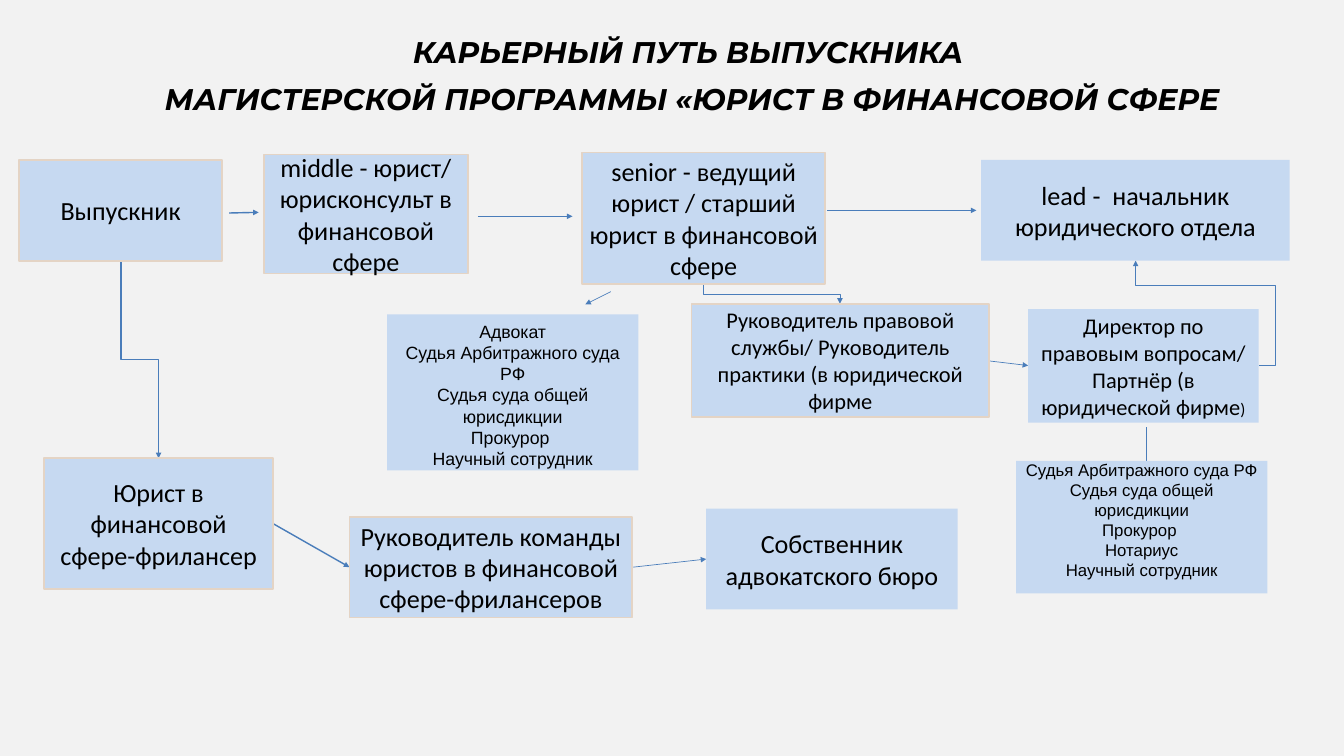
from lxml.etree import SubElement
from pptx import Presentation
from pptx.dml.color import RGBColor
from pptx.enum.shapes import MSO_CONNECTOR, MSO_SHAPE
from pptx.enum.text import MSO_ANCHOR, PP_ALIGN
from pptx.oxml.ns import qn
from pptx.util import Pt

PX = 9144
SLIDE = (2000, 1125)
INK, PAPER, BLUE, BEIGE, ARROW = "000000", "F2F2F2", "C6D9F1", "E4D4C5", "4A7DBA"

TITLE = ["КАРЬЕРНЫЙ ПУТЬ ВЫПУСКНИКА ", "МАГИСТЕРСКОЙ ПРОГРАММЫ «ЮРИСТ В ФИНАНСОВОЙ СФЕРЕ"]
TITLE_PLACE = (102, 32, 1857, 143)

# place, font size, outlined, text
ROLES = [
    ((28, 238, 303, 150), 28, True, "Выпускник"),
    ((66, 682, 340, 194), 28, True, "Юрист в финансовой сфере-фрилансер"),
    ((393, 230, 303, 177), 28, True, "middle - юрист/ юрисконсульт в финансовой сфере"),
    ((866, 227, 362, 195), 28, True, "senior - ведущий юрист / старший юрист в финансовой сфере"),
    ((520, 769, 421, 150), 28, True, "Руководитель команды юристов в финансовой сфере-фрилансеров"),
    ((1029, 452, 443, 168), 24, True, "Руководитель правовой службы/ Руководитель практики (в юридической фирме"),
    ((1530, 460, 343, 169), 24, False, "Директор по правовым вопросам/ Партнёр (в юридической фирме"),
    ((1460, 238, 459, 150), 28, False, "lead -  начальник юридического отдела"),
    ((1051, 757, 374, 150), 28, False, "Собственник адвокатского бюро"),
]
CLOSING_BRACKET = {"Директор по правовым вопросам/ Партнёр (в юридической фирме": (")", 18)}

COURT = ["Судья Арбитражного суда РФ", "Судья суда общей юрисдикции", "Прокурор "]
ALTERNATIVES = [
    ((1512, 686, 374, 197), 18, (5, 27), COURT + ["Нотариус", "Научный сотрудник"]),
    ((576, 468, 374, 232), 19, (12, 5), ["Адвокат"] + COURT + ["Научный сотрудник"]),
]

STRAIGHT_STEPS = [
    ((341, 317), (385, 316), 1.5),
    ((711, 322), (852, 322), 1.5),
    ((406, 779), (520, 844), 1.5),
    ((1231, 313), (1453, 313), 0.75),
    ((1471, 537), (1530, 544), 0.75),
    ((942, 844), (1051, 832), 0.75),
    ((1706, 636), (1706, 731), 0.75),
    ((909, 434), (871, 453), 0.75),
]
DOWNWARD_STEPS = [((180, 388), (236, 682), 1.5), ((1047, 423), (1250, 452), 0.75)]
RETURN_STEP = ((1873, 544), (1690, 388), 0.75)
RETURN_BENDS = {"adj1": -13600, "adj2": 76900}


def px(*lengths):
    """Turn px into EMU."""
    return [round(length * PX) for length in lengths]


def color(value):
    """Turn a hex string into a colour."""
    return RGBColor.from_string(value)


def write(frame, lines, font_name, size, insets=(10, 5, 10, 5)):
    """Fill a text frame with centred paragraphs."""
    frame.word_wrap = True
    frame.margin_left, frame.margin_top, frame.margin_right, frame.margin_bottom = px(*insets)
    frame.text = "\n".join(lines)
    for paragraph in frame.paragraphs:
        paragraph.alignment = PP_ALIGN.CENTER
        paragraph.font.name = font_name
        paragraph.font.size = Pt(size)
        paragraph.font.color.rgb = color(INK)


def add_box(slide, place, outlined=False):
    """Add a blue box and return its text frame."""
    box = slide.shapes.add_shape(MSO_SHAPE.RECTANGLE, *px(*place))
    box.shadow.inherit = False
    box.fill.solid()
    box.fill.fore_color.rgb = color(BLUE)
    if outlined:
        box.line.color.rgb = color(BEIGE)
        box.line.width = Pt(2)
    else:
        box.line.fill.background()
    box.text_frame.vertical_anchor = MSO_ANCHOR.MIDDLE
    return box.text_frame


def add_arrow(slide, start, end, width, kind=MSO_CONNECTOR.STRAIGHT):
    """Add an arrow and return its shape properties."""
    arrow = slide.shapes.add_connector(kind, *px(*start, *end))
    arrow.line.color.rgb = color(ARROW)
    arrow.line.width = Pt(width)
    properties = arrow._element.spPr
    SubElement(properties.find(qn("a:ln")), qn("a:tailEnd"), type="triangle")
    SubElement(properties, qn("a:effectLst"))
    return properties


def add_downward_arrow(slide, start, end, width):
    """Add an elbow arrow that leaves and arrives vertically."""
    (x1, y1), (x2, y2) = start, end
    middle_x, middle_y = (x1 + x2) / 2, (y1 + y2) / 2
    half_drop, half_shift = (y2 - y1) / 2, (x2 - x1) / 2
    properties = add_arrow(
        slide,
        (middle_x + half_drop, middle_y - half_shift),
        (middle_x - half_drop, middle_y + half_shift),
        width,
        MSO_CONNECTOR.ELBOW,
    )
    properties.find(qn("a:xfrm")).set("rot", str(270 * 60000))


def add_return_arrow(slide, start, end, width):
    """Add an elbow arrow that loops back and arrives vertically."""
    geometry = add_arrow(slide, start, end, width, MSO_CONNECTOR.ELBOW).find(qn("a:prstGeom"))
    geometry.set("prst", "bentConnector4")
    guides = geometry.find(qn("a:avLst"))
    for name, value in RETURN_BENDS.items():
        SubElement(guides, qn("a:gd"), name=name, fmla=f"val {value}")


def main():
    """Build the career path slide."""
    deck = Presentation()
    deck.slide_width, deck.slide_height = px(*SLIDE)
    slide = deck.slides.add_slide(deck.slide_layouts[6])
    slide.background.fill.solid()
    slide.background.fill.fore_color.rgb = color(PAPER)

    heading = slide.shapes.add_textbox(*px(*TITLE_PLACE)).text_frame
    write(heading, TITLE, "Montserrat", 32, (0, 0, 0, 0))
    for paragraph in heading.paragraphs:
        paragraph.line_spacing = 1.33
        paragraph.font.bold = paragraph.font.italic = True

    for step in STRAIGHT_STEPS:
        add_arrow(slide, *step)
    for step in DOWNWARD_STEPS:
        add_downward_arrow(slide, *step)
    add_return_arrow(slide, *RETURN_STEP)

    for place, size, outlined, role in ROLES:
        frame = add_box(slide, place, outlined)
        write(frame, [role], "Calibri", size)
        if role in CLOSING_BRACKET:
            bracket = frame.paragraphs[0].add_run()
            bracket.text, bracket_size = CLOSING_BRACKET[role]
            bracket.font.size = Pt(bracket_size)
    for place, size, (top, bottom), posts in ALTERNATIVES:
        write(add_box(slide, place), posts, "Arial", size, (10, top, 10, bottom))

    deck.save("out.pptx")


if __name__ == "__main__":
    main()
